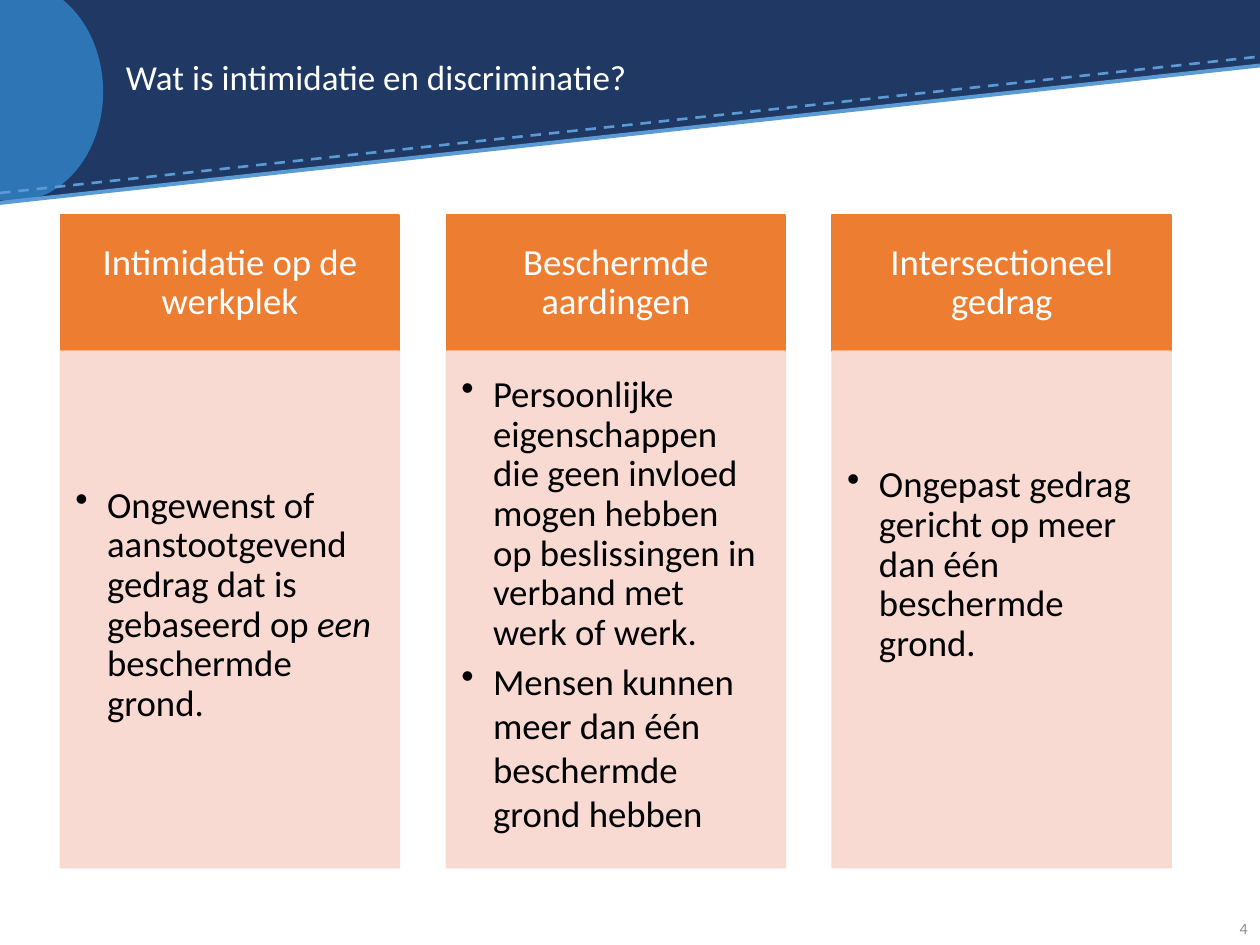
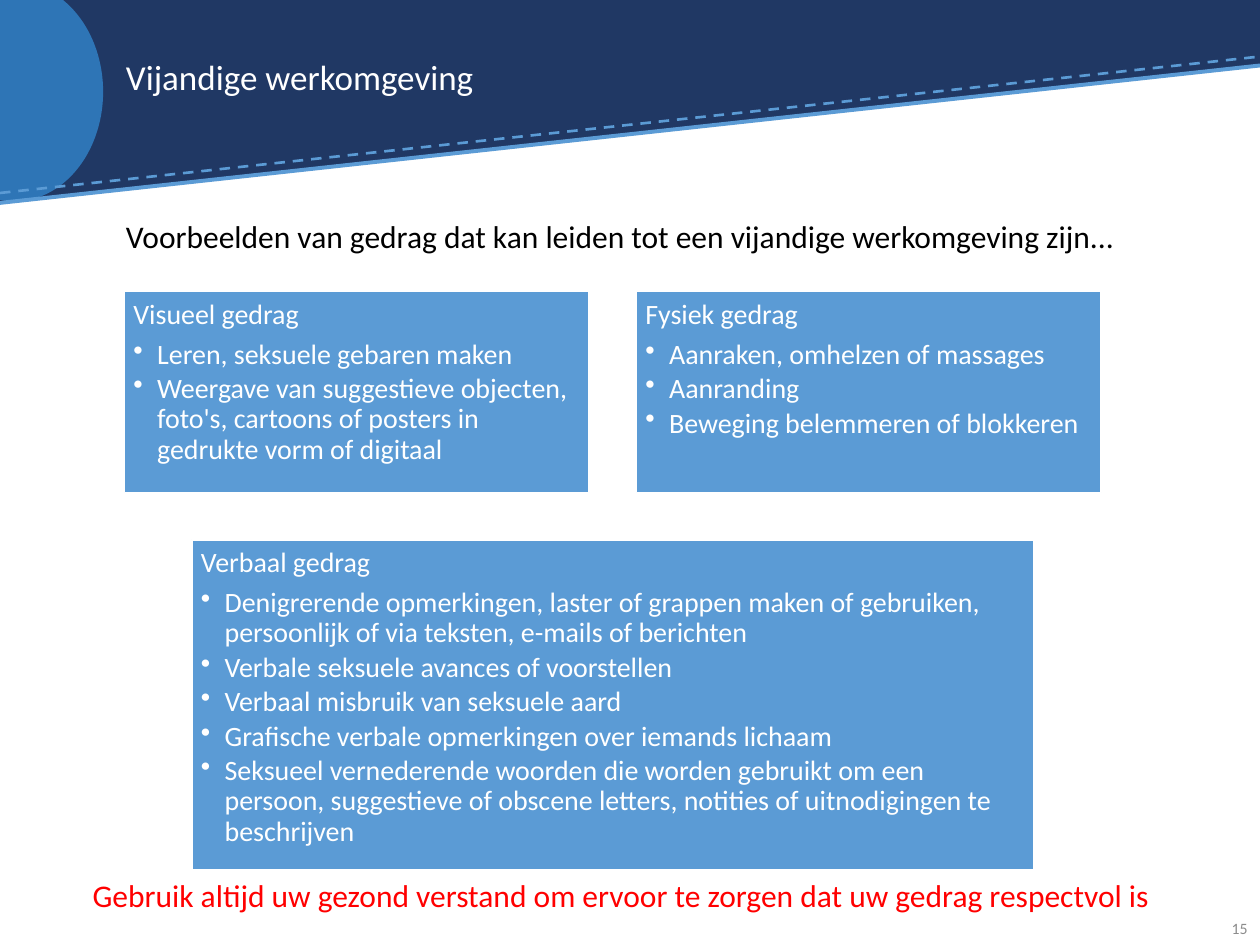
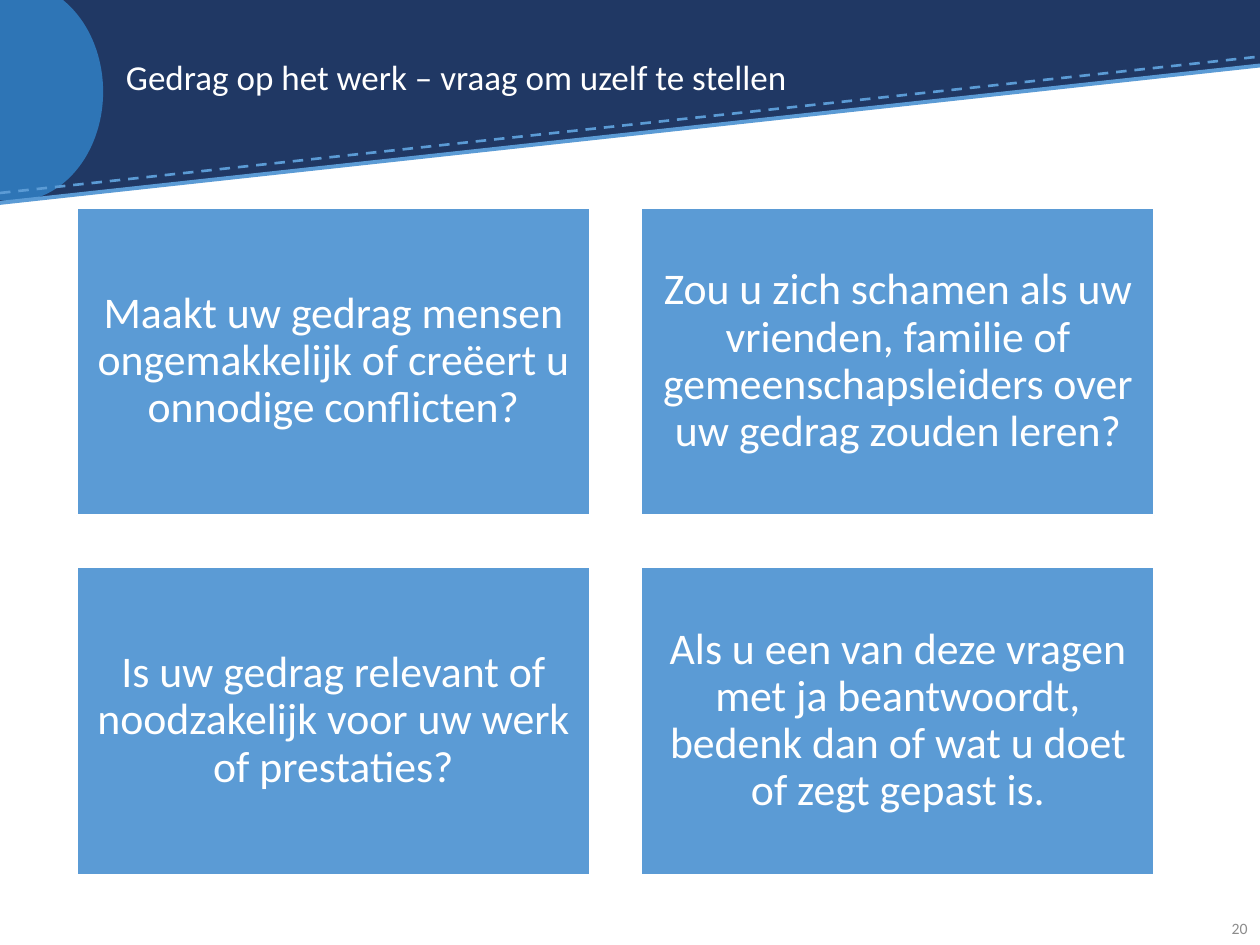
"""Build three Dutch training slides on respectful conduct at work."""
from dataclasses import dataclass
from itertools import product
from typing import Any, Optional

from lxml import etree
from pptx import Presentation
from pptx import util as u
from pptx.dml import color
from pptx.enum import dml, shapes, text
from pptx.oxml import ns


@dataclass(frozen=True)
class Theme:
    font: str = "Calibri"
    navy: str = "203864"
    ocean: str = "2E75B6"
    sky: str = "5B9BD5"
    orange: str = "ED7D31"
    blush: str = "F8D7CE"
    white: str = "FFFFFF"
    black: str = "000000"
    red: str = "FF0000"
    grey: str = "8C8C8C"
    title_size: float = 20
    number_size: float = 9
    column_size: float = 21
    message_size: float = 18
    conduct_size: float = 16
    question_size: float = 25


@dataclass(frozen=True)
class Area:
    left: float
    top: float
    width: float
    height: float


@dataclass(frozen=True)
class Span:
    words: str
    italic: bool = False


@dataclass(frozen=True)
class Para:
    spans: tuple[Span, ...]
    spacing: float = 0.9
    after: float = 0
    indent: float = 0


@dataclass(frozen=True)
class Style:
    size: float
    ink: str
    align: Any = text.PP_ALIGN.LEFT
    anchor: Any = text.MSO_ANCHOR.MIDDLE
    insets: tuple[float, float, float, float] = (0.25, 0.13, 0.25, 0.13)


@dataclass(frozen=True)
class Column:
    heading: str
    points: tuple[Para, ...]
    bottom_inset: float = 0.46


@dataclass(frozen=True)
class Conduct:
    area: Area
    heading: str
    examples: tuple[str, ...]


THEME = Theme()
PAGE_WIDTH, PAGE_HEIGHT = 25.4, 19.05
HEADING_AFTER, POINT_AFTER = 0.35, 0.15
CENTER = text.PP_ALIGN.CENTER
TOP = text.MSO_ANCHOR.TOP
RECTANGLE = shapes.MSO_SHAPE.RECTANGLE


def plain(words: str, spacing: float = 0.9, after: float = 0, indent: float = 0) -> Para:
    """Make a paragraph of one upright span."""
    return Para((Span(words),), spacing, after, indent)


def rgb(value: str) -> color.RGBColor:
    """Turn a hex value into a colour."""
    return color.RGBColor.from_string(value)


def add_bullet(para: Any, indent: float) -> None:
    """Give a paragraph a hanging round bullet."""
    properties = para._p.get_or_add_pPr()
    properties.set("marL", str(u.Cm(indent)))
    properties.set("indent", str(-u.Cm(indent)))
    etree.SubElement(properties, ns.qn("a:buChar")).set("char", "•")


def write(box: Any, paras: tuple[Para, ...], style: Style) -> None:
    """Fill a box with styled paragraphs."""
    frame = box.text_frame
    frame.word_wrap = True
    frame.vertical_anchor = style.anchor
    (frame.margin_left, frame.margin_top,
     frame.margin_right, frame.margin_bottom) = map(u.Cm, style.insets)
    for index, item in enumerate(paras):
        para = frame.add_paragraph() if index else frame.paragraphs[0]
        if item.indent:
            add_bullet(para, item.indent)
        para.alignment = style.align
        para.line_spacing = item.spacing
        para.space_after = u.Pt(round(item.after * style.size, 1))
        for span in item.spans:
            run = para.add_run()
            run.text = span.words
            run.font.name = THEME.font
            run.font.size = u.Pt(style.size)
            run.font.italic = span.italic
            run.font.color.rgb = rgb(style.ink)


def place(area: Area) -> tuple[u.Cm, ...]:
    """Turn an area into slide lengths."""
    return tuple(map(u.Cm, (area.left, area.top, area.width, area.height)))


def add_text(page: Any, area: Area, para: Para, style: Style) -> None:
    """Add a text box with one paragraph."""
    write(page.shapes.add_textbox(*place(area)), (para,), style)


def add_block(page: Any, kind: Any, area: Area, fill: str, line: Optional[str] = None) -> Any:
    """Add a flat filled shape, outlined when a line colour is given."""
    block = page.shapes.add_shape(kind, *place(area))
    block.shadow.inherit = False
    block.fill.solid()
    block.fill.fore_color.rgb = rgb(fill)
    if line:
        block.line.color.rgb = rgb(line)
        block.line.width = u.Pt(1)
    else:
        block.line.fill.background()
    return block


def soften(block: Any, percent: int) -> None:
    """Set the opacity of a block's fill and line."""
    for tint in block.element.spPr.iter(ns.qn("a:srgbClr")):
        etree.SubElement(tint, ns.qn("a:alpha")).set("val", str(percent * 1000))


def add_slope(page: Any, start: float, end: float, width: float, dashed: bool = False) -> None:
    """Draw a sloping line across the page."""
    line = page.shapes.add_connector(
        shapes.MSO_CONNECTOR.STRAIGHT, u.Cm(0), u.Cm(start), u.Cm(PAGE_WIDTH), u.Cm(end))
    line.line.color.rgb = rgb(THEME.sky)
    line.line.width = u.Pt(width)
    if dashed:
        line.line.dash_style = dml.MSO_LINE.DASH
    etree.SubElement(line.element.spPr, ns.qn("a:effectLst"))


def add_page(deck: Any, title: str, number: int) -> Any:
    """Add a page with the shared banner, title and number."""
    page = deck.slides.add_slide(deck.slide_layouts[6])
    add_block(page, RECTANGLE, Area(0, 0, PAGE_WIDTH, 1.32), THEME.navy)
    wedge = add_block(page, shapes.MSO_SHAPE.RIGHT_TRIANGLE,
                      Area(0, 1.3, PAGE_WIDTH, 2.77), THEME.navy)
    wedge.element.spPr.find(ns.qn("a:xfrm")).set("flipV", "1")
    add_block(page, shapes.MSO_SHAPE.OVAL, Area(-1.5, -0.36, 3.58, 4.42), THEME.ocean)
    add_slope(page, 3.89, 1.14, 1.5, dashed=True)
    add_slope(page, 4.09, 1.32, 2.25)
    add_text(page, Area(2.29, 0.51, 20.45, 2.18), plain(title),
             Style(THEME.title_size, THEME.white))
    add_text(page, Area(24.05, 18.21, 1.35, 1.02), plain(str(number), spacing=1),
             Style(THEME.number_size, THEME.grey, text.PP_ALIGN.RIGHT))
    return page


def build_definitions(deck: Any) -> None:
    """Build the page with three definition columns."""
    page = add_page(deck, "Wat is intimidatie en discriminatie?", 4)
    indent = 0.64
    columns = (
        Column("Intimidatie op de werkplek", (
            Para((Span("Ongewenst of aanstootgevend gedrag dat is gebaseerd op "),
                  Span("een ", italic=True),
                  Span("beschermde grond.")), 0.9, POINT_AFTER, indent),)),
        Column("Beschermde aardingen", (
            plain("Persoonlijke eigenschappen die geen invloed mogen hebben op "
                  "beslissingen in verband met werk of werk.", 0.9, POINT_AFTER, indent),
            plain("Mensen kunnen meer dan één beschermde grond hebben",
                  1, POINT_AFTER, indent))),
        Column("Intersectioneel gedrag", (
            plain("Ongepast gedrag gericht op meer dan één beschermde grond.",
                  0.9, POINT_AFTER, indent),), bottom_inset=2.08),
    )
    left, top, width, step = 1.22, 4.34, 6.83, 7.78
    heading_height, body_height = 2.74, 10.41
    for index, column in enumerate(columns):
        column_left = left + index * step
        heading = add_block(page, RECTANGLE, Area(column_left, top, width, heading_height),
                            THEME.orange, THEME.orange)
        write(heading, (plain(column.heading, after=HEADING_AFTER),),
              Style(THEME.column_size, THEME.white, CENTER, insets=(0.41, 0.23, 0.41, 0.23)))
        body = add_block(page, RECTANGLE,
                         Area(column_left, top + heading_height, width, body_height),
                         THEME.blush, THEME.blush)
        soften(body, 90)
        write(body, column.points, Style(THEME.column_size, THEME.black,
                                         insets=(0.3, 0.3, 0.41, column.bottom_inset)))


def build_environment(deck: Any) -> None:
    """Build the page with examples of hostile conduct."""
    page = add_page(deck, "Vijandige werkomgeving", 15)
    add_text(page, Area(1.04, 17.53, 22.96, 1.78),
             plain("Gebruik altijd uw gezond verstand om ervoor te zorgen dat uw gedrag "
                   "respectvol is", spacing=1),
             Style(THEME.message_size, THEME.red, CENTER, TOP))
    add_text(page, Area(2.29, 4.24, 21.79, 1.78),
             plain("Voorbeelden van gedrag dat kan leiden tot een vijandige werkomgeving "
                   "zijn...", spacing=1),
             Style(THEME.message_size, THEME.black, anchor=TOP))
    left, top, width, height, gap = 2.51, 5.87, 9.37, 4.06, 0.95
    wide = 16.97
    conducts = (
        Conduct(Area(left, top, width, height), "Visueel gedrag", (
            "Leren, seksuele gebaren maken",
            "Weergave van suggestieve objecten, foto's, cartoons of posters in gedrukte "
            "vorm of digitaal")),
        Conduct(Area(left + width + gap, top, width, height), "Fysiek gedrag", (
            "Aanraken, omhelzen of massages",
            "Aanranding",
            "Beweging belemmeren of blokkeren")),
        Conduct(Area(left + width + (gap - wide) / 2, top + height + gap, wide, 6.65),
                "Verbaal gedrag", (
            "Denigrerende opmerkingen, laster of grappen maken of gebruiken, persoonlijk "
            "of via teksten, e-mails of berichten",
            "Verbale seksuele avances of voorstellen",
            "Verbaal misbruik van seksuele aard",
            "Grafische verbale opmerkingen over iemands lichaam",
            "Seksueel vernederende woorden die worden gebruikt om een persoon, suggestieve "
            "of obscene letters, notities of uitnodigingen te beschrijven")),
    )
    style = Style(THEME.conduct_size, THEME.white, anchor=TOP, insets=(0.18,) * 4)
    for conduct in conducts:
        box = add_block(page, RECTANGLE, conduct.area, THEME.sky, THEME.white)
        examples = (plain(words, after=POINT_AFTER, indent=0.48) for words in conduct.examples)
        write(box, (plain(conduct.heading, after=HEADING_AFTER), *examples), style)


def build_questions(deck: Any) -> None:
    """Build the page with a grid of questions."""
    page = add_page(deck, "Gedrag op het werk – vraag om uzelf te stellen", 20)
    questions = (
        "Maakt uw gedrag mensen ongemakkelijk of creëert u onnodige conflicten?",
        "Zou u zich schamen als uw vrienden, familie of gemeenschapsleiders over uw gedrag "
        "zouden leren?",
        "Is uw gedrag relevant of noodzakelijk voor uw werk of prestaties?",
        "Als u een van deze vragen met ja beantwoordt, bedenk dan of wat u doet of zegt "
        "gepast is.",
    )
    left, top, width, height, gap = 1.55, 4.19, 10.34, 6.2, 1.04
    style = Style(THEME.question_size, THEME.white, CENTER, insets=(0.25,) * 4)
    for (row, column), question in zip(product(range(2), repeat=2), questions):
        area = Area(left + column * (width + gap), top + row * (height + gap), width, height)
        box = add_block(page, RECTANGLE, area, THEME.sky, THEME.white)
        write(box, (plain(question, after=HEADING_AFTER),), style)


def main() -> None:
    """Build and save the deck."""
    deck = Presentation()
    deck.slide_width, deck.slide_height = u.Cm(PAGE_WIDTH), u.Cm(PAGE_HEIGHT)
    build_definitions(deck)
    build_environment(deck)
    build_questions(deck)
    deck.save("out.pptx")


if __name__ == "__main__":
    main()
